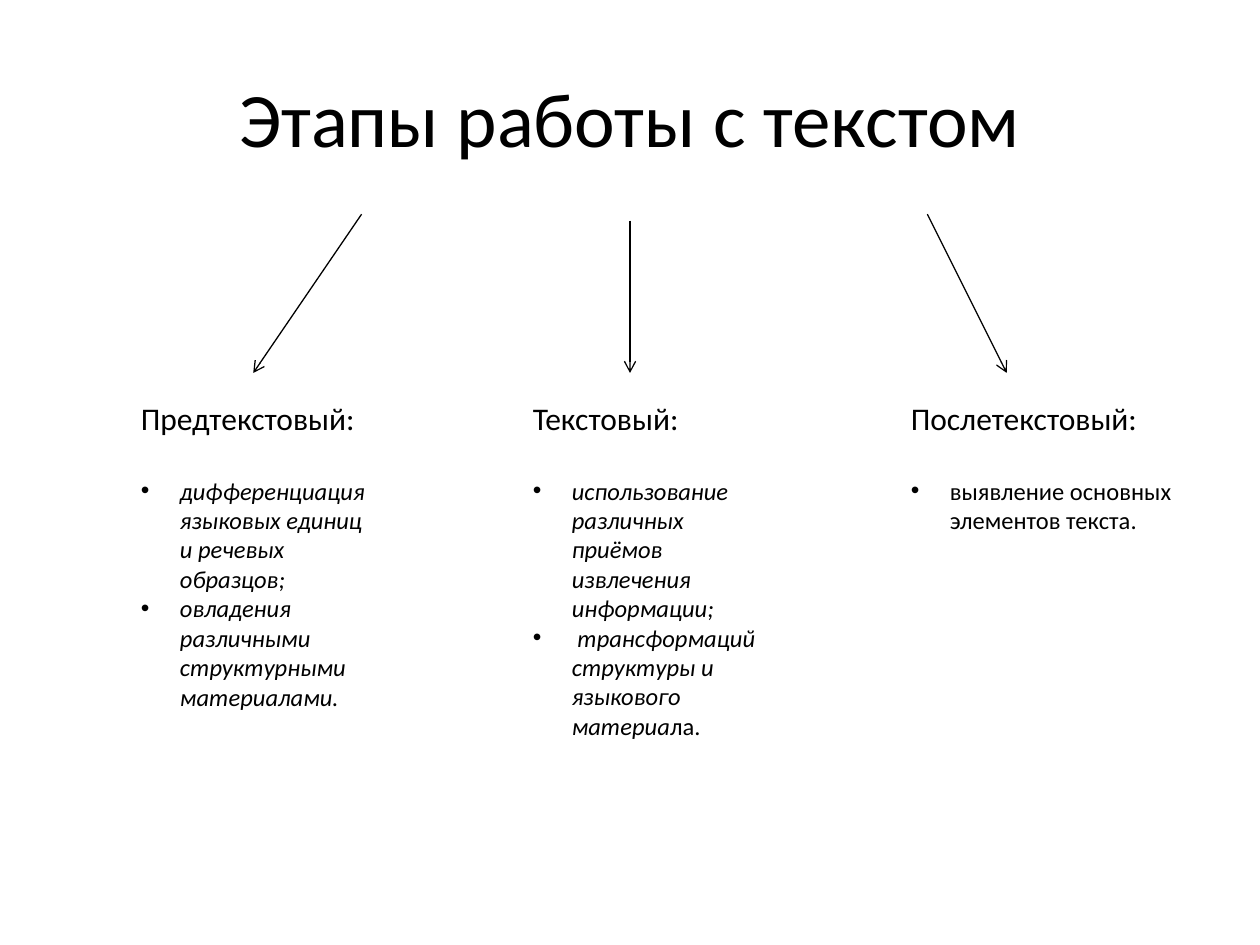
from lxml import etree
from pptx import Presentation
from pptx.dml.color import RGBColor
from pptx.enum.shapes import MSO_CONNECTOR
from pptx.enum.text import MSO_ANCHOR, PP_ALIGN
from pptx.oxml.ns import qn
from pptx.util import Inches, Pt

STRAIGHT = MSO_CONNECTOR.STRAIGHT
MIDDLE = MSO_ANCHOR.MIDDLE
CENTER = PP_ALIGN.CENTER

COLORS = {"background": "FFFFFF", "ink": "000000"}
STAGE_TOP = 3.12
ARROW_END = 2.96
BULLET_INDENT = 0.31

# Each bullet is a list of (text, italic) runs.
STAGES = [
    {
        "heading": "Предтекстовый:",
        "box": (1.02, 2.09, 2.59),
        "arrow": (2.87, 1.7, 2.01),
        "bullets": [
            [("дифференциация языковых единиц и речевых образцов;", True)],
            [("овладения различными структурными материалами.", True)],
        ],
    },
    {
        "heading": "Текстовый:",
        "box": (4.13, 1.99, 2.83),
        "arrow": (5, 1.75, 5),
        "bullets": [
            [("использование различных приёмов извлечения информации;", True)],
            [(" трансформаций структуры и языкового материа", True), ("ла.", False)],
        ],
    },
    {
        "heading": "Послетекстовый:",
        "box": (7.13, 2.28, 1.41),
        "arrow": (7.36, 1.7, 7.99),
        "bullets": [[("выявление основных элементов текста.", False)]],
    },
]


class SlideBuilder:
    font = "Calibri"
    title_size = 44
    heading_size = 18
    bullet_size = 14

    def __init__(self, slide):
        self.slide = slide
        fill = slide.background.fill
        fill.solid()
        fill.fore_color.rgb = RGBColor.from_string(COLORS["background"])

    def frame(self, left, top, width, height):
        box = self.slide.shapes.add_textbox(
            Inches(left), Inches(top), Inches(width), Inches(height))
        box.text_frame.word_wrap = True
        return box.text_frame

    def run(self, paragraph, text, size, italic=False):
        run = paragraph.add_run()
        run.text = text
        run.font.name = self.font
        run.font.size = Pt(size)
        run.font.italic = italic
        run.font.color.rgb = RGBColor.from_string(COLORS["ink"])

    def title(self, text):
        frame = self.frame(0.5, 0.3, 9, 1.25)
        frame.vertical_anchor = MIDDLE
        paragraph = frame.paragraphs[0]
        paragraph.alignment = CENTER
        self.run(paragraph, text, self.title_size)

    def arrow(self, start_x, start_y, end_x, end_y):
        connector = self.slide.shapes.add_connector(
            STRAIGHT, Inches(start_x), Inches(start_y), Inches(end_x), Inches(end_y))
        connector.line.color.rgb = RGBColor.from_string(COLORS["ink"])
        connector.line.width = Pt(0.75)
        etree.SubElement(connector.line._get_or_add_ln(), qn("a:tailEnd"), type="arrow")
        etree.SubElement(connector._element.spPr, qn("a:effectLst"))

    def bullet(self, frame, runs):
        paragraph = frame.add_paragraph()
        properties = paragraph._p.get_or_add_pPr()
        properties.set("marL", str(Inches(BULLET_INDENT)))
        properties.set("indent", str(-Inches(BULLET_INDENT)))
        etree.SubElement(properties, qn("a:buFont"), typeface="Arial")
        etree.SubElement(properties, qn("a:buChar"), char="•")
        for text, italic in runs:
            self.run(paragraph, text, self.bullet_size, italic)

    def stage(self, heading, box, bullets):
        left, width, height = box
        frame = self.frame(left, STAGE_TOP, width, height)
        first = frame.paragraphs[0]
        first.space_after = Pt(22)
        self.run(first, heading, self.heading_size)
        for runs in bullets:
            self.bullet(frame, runs)


def main():
    presentation = Presentation()
    presentation.slide_width = Inches(10)
    presentation.slide_height = Inches(7.5)
    builder = SlideBuilder(presentation.slides.add_slide(presentation.slide_layouts[6]))

    builder.title("Этапы работы с текстом")
    for stage in STAGES:
        builder.arrow(*stage["arrow"], ARROW_END)
    for stage in STAGES:
        builder.stage(stage["heading"], stage["box"], stage["bullets"])

    presentation.save("out.pptx")


if __name__ == "__main__":
    main()
